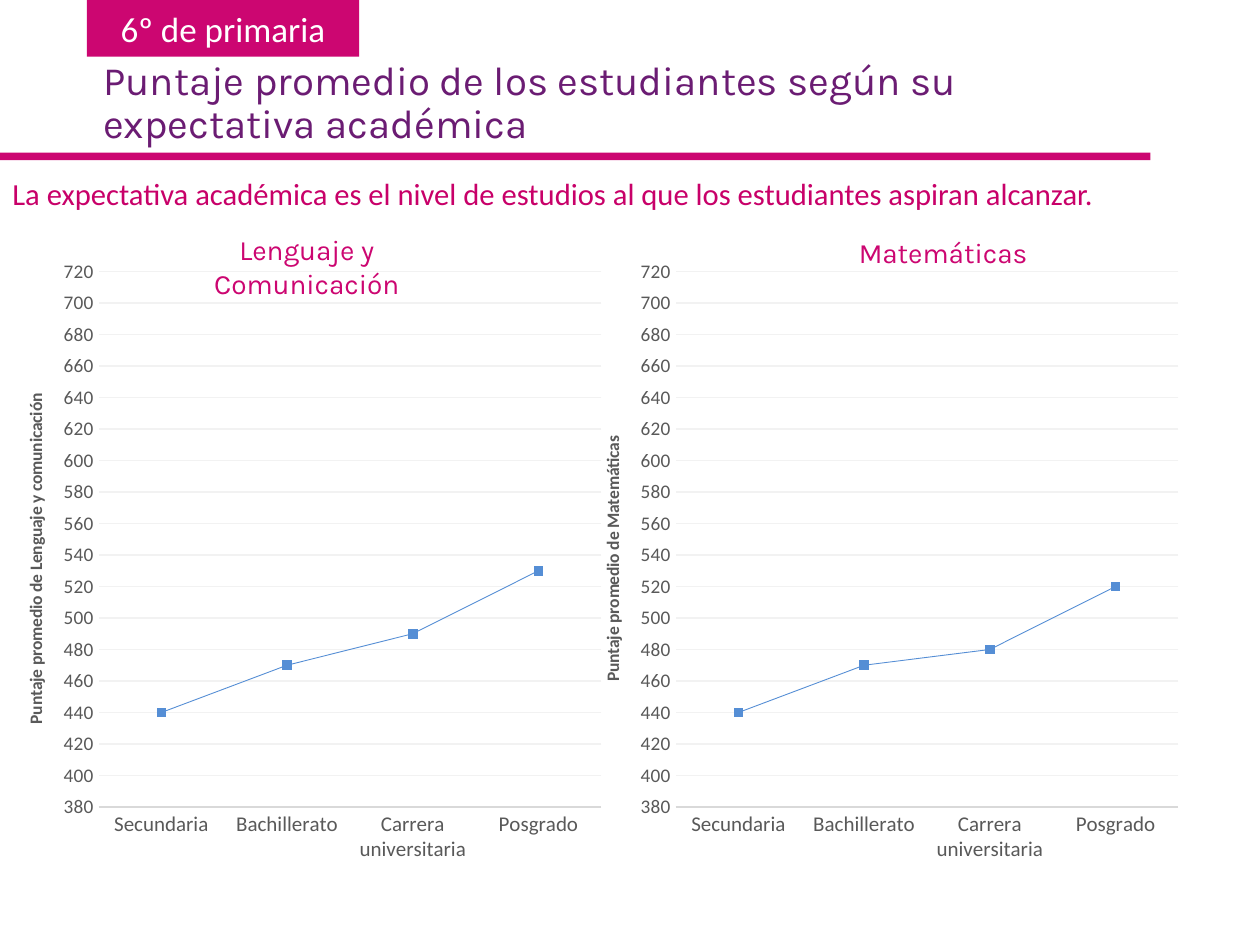
from pptx import Presentation
from pptx.chart.data import CategoryChartData
from pptx.dml.color import RGBColor
from pptx.enum.chart import XL_CHART_TYPE as ChartType, XL_MARKER_STYLE as Marker, XL_TICK_MARK as Tick
from pptx.enum.shapes import MSO_SHAPE as Preset
from pptx.enum.text import MSO_ANCHOR as Anchor, PP_ALIGN as Align
from pptx.util import Inches, Pt

MAGENTA = RGBColor(0xCC, 0x06, 0x71)
CRIMSON = RGBColor(0xC8, 0x00, 0x69)
PURPLE = RGBColor(0x6B, 0x1C, 0x73)
WHITE = RGBColor(0xFF, 0xFF, 0xFF)
BLUE = RGBColor(0x55, 0x8E, 0xD5)
LABEL_GRAY = RGBColor(0x59, 0x59, 0x59)
AXIS_GRAY = RGBColor(0xD9, 0xD9, 0xD9)
GRID_GRAY = RGBColor(0xF2, 0xF2, 0xF2)

deck = Presentation()
deck.slide_width, deck.slide_height = Inches(10), Inches(7.5)
slide = deck.slides.add_slide(deck.slide_layouts[6])


def area(left, top, width, height):
    """Turn percentages of the slide's width and height into lengths."""
    across, down = deck.slide_width / 100, deck.slide_height / 100
    return int(left * across), int(top * down), int(width * across), int(height * down)


def write(holder, text, *, size, color, font="Calibri", align=Align.LEFT,
          anchor=Anchor.TOP, before=0, spacing=None):
    frame = holder.text_frame
    frame.word_wrap = True
    frame.vertical_anchor = anchor
    line = frame.paragraphs[0]
    line.alignment, line.space_before, line.line_spacing = align, Pt(before), spacing
    words = line.add_run()
    words.text = text
    words.font.name, words.font.size, words.font.color.rgb = font, Pt(size), color


# Grade tab and the rule under the heading
grade_tab, heading_rule = (
    slide.shapes.add_shape(Preset.RECTANGLE, *area(*place))
    for place in ((6.9, 0, 21.6, 6), (0, 16.15, 91.3, 0.8)))
for bar in (grade_tab, heading_rule):
    bar.shadow.inherit = False
    bar.fill.solid()
    bar.fill.fore_color.rgb = MAGENTA
    bar.line.fill.background()
write(grade_tab, "6º de primaria", size=20, color=WHITE, align=Align.CENTER, anchor=Anchor.MIDDLE)

# Heading and definition
heading = slide.shapes.add_textbox(*area(7.2, 5.75, 86.2, 12.25))
write(heading, "Puntaje promedio de los estudiantes según su expectativa académica",
      size=23, color=PURPLE, font="Karla", spacing=0.9)
definition = slide.shapes.add_textbox(*area(0, 17.85, 100, 5.35))
write(definition, "La expectativa académica es el nivel de estudios al que los estudiantes aspiran alcanzar.",
      size=17.5, color=CRIMSON)

# One subject per column: name, its place, axis title, chart left, scores
LEVELS = ["Secundaria", "Bachillerato", "Carrera universitaria", "Posgrado"]
SUBJECTS = [
    ("Lenguaje y Comunicación", (10.8, 24), "Lenguaje y comunicación", -0.1, [440, 470, 490, 530]),
    ("Matemáticas", (61.3, 24.25), "Matemáticas", 45.7, [440, 470, 480, 520]),
]
for subject, subject_place, axis_subject, chart_left, scores in SUBJECTS:
    subject_label = slide.shapes.add_textbox(*area(*subject_place, 27.1, 5.75))
    write(subject_label, subject, size=16, color=MAGENTA, font="Karla", align=Align.CENTER, before=10)

    data = CategoryChartData()
    data.categories = LEVELS
    data.add_series("Series 1", scores)
    chart = slide.shapes.add_chart(
        ChartType.LINE_MARKERS, *area(chart_left, 25.75, 48.8, 66.8), data).chart
    chart.has_legend = chart.has_title = False
    chart.font.name, chart.font.size = "Calibri", Pt(10)

    # Axes
    level_axis, score_axis = chart.category_axis, chart.value_axis
    for axis, size in ((level_axis, 12), (score_axis, 11)):
        axis.major_tick_mark = axis.minor_tick_mark = Tick.NONE
        labels = axis.tick_labels.font
        labels.name, labels.size, labels.color.rgb = "Calibri", Pt(size), LABEL_GRAY
    score_axis.minimum_scale, score_axis.maximum_scale, score_axis.major_unit = 380, 730, 20
    score_axis.format.line.fill.background()
    for stroke, color in ((level_axis.format.line, AXIS_GRAY),
                          (score_axis.major_gridlines.format.line, GRID_GRAY)):
        stroke.color.rgb, stroke.width = color, Pt(0.75)

    # Upright axis title
    title_frame = score_axis.axis_title.text_frame
    title_frame.text = f"Puntaje promedio de {axis_subject}"
    title_font = title_frame.paragraphs[0].runs[0].font
    title_font.name, title_font.size, title_font.bold = "Calibri", Pt(10), True
    title_font.color.rgb = LABEL_GRAY
    turn = title_frame._txBody.bodyPr
    turn.set("rot", "-5400000")
    turn.set("vert", "horz")

    # Score line
    score_line = chart.plots[0].series[0]
    score_line.smooth = False
    score_line.format.line.color.rgb, score_line.format.line.width = BLUE, Pt(0.5)
    score_line.marker.style, score_line.marker.size = Marker.SQUARE, 5
    score_line.marker.format.fill.solid()
    score_line.marker.format.fill.fore_color.rgb = BLUE
    score_line.marker.format.line.color.rgb = BLUE

deck.save("out.pptx")
